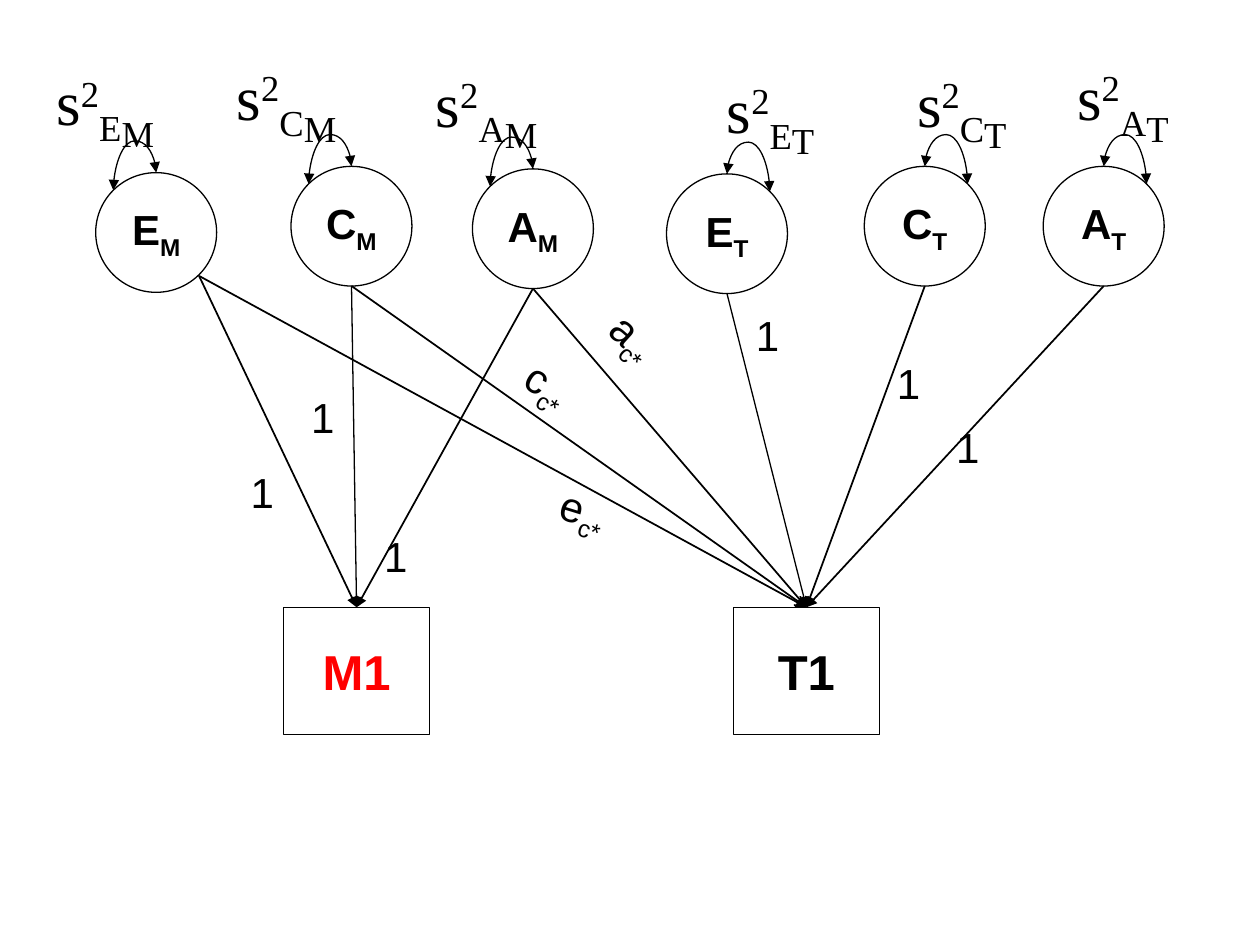
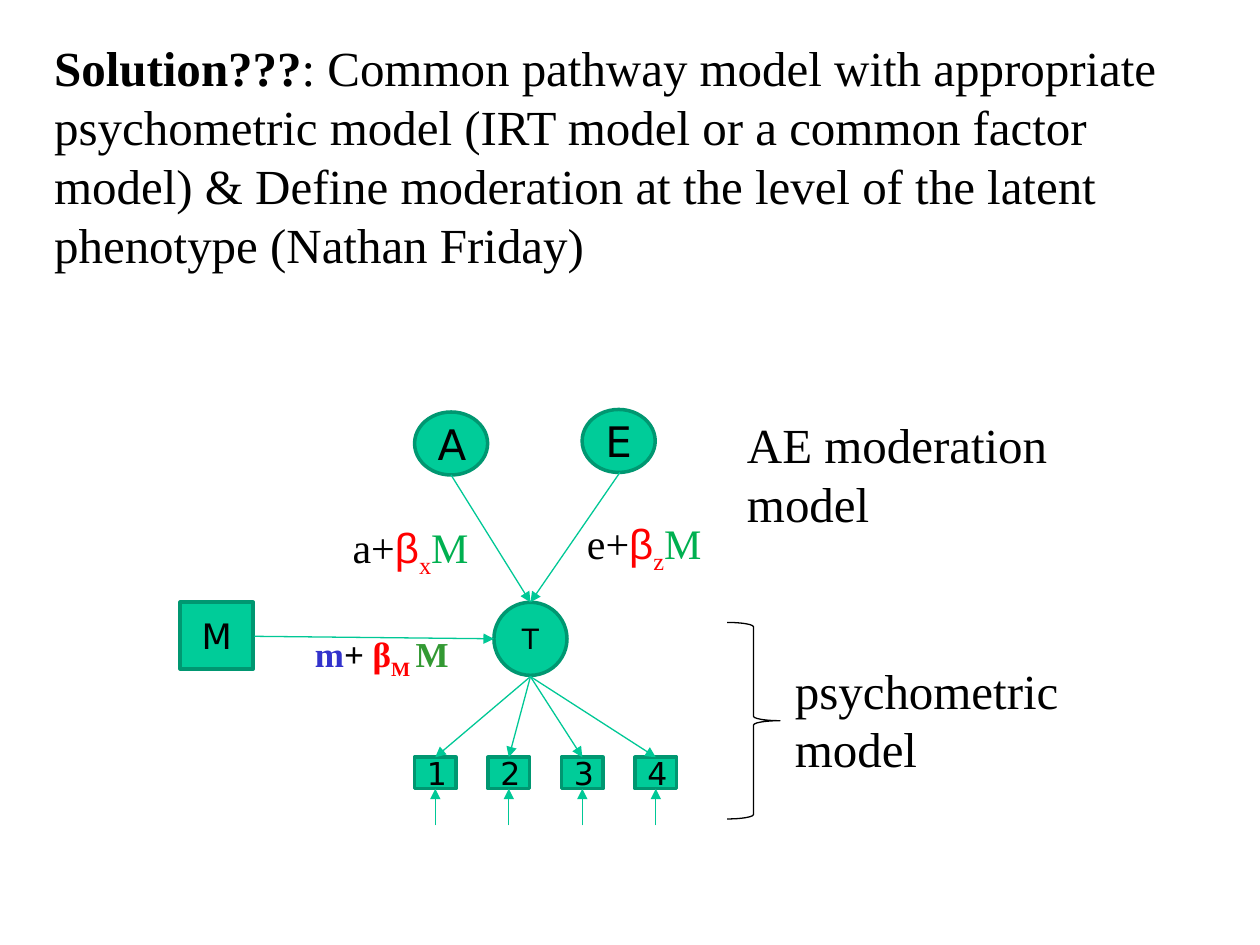
"""Build two slides of path diagrams for twin models with moderation."""
from dataclasses import dataclass
from typing import Optional

from lxml.etree import SubElement
from pptx import Presentation
from pptx.dml.color import RGBColor
from pptx.enum.shapes import MSO_CONNECTOR as Link, MSO_SHAPE as Preset
from pptx.enum.text import MSO_ANCHOR as Anchor, MSO_AUTO_SIZE as AutoSize, PP_ALIGN as Align
from pptx.oxml.ns import qn
from pptx.util import Inches, Pt

BLACK, WHITE, RED = "000000", "FFFFFF", "FF0000"
TEAL, TEAL_EDGE, TEAL_LINE = "00CC99", "009771", "00C896"
LEAF, GREEN, BLUE = "00B050", "339933", "3333CC"
SANS, SERIF, NODE_FONT = "Arial", "Times New Roman", "DejaVu Sans"
SUB, LOW_SUB, SUPER = -25, -34, 30
CIRCLE_W, CIRCLE_H = 0.96, 0.95
RECT_W, RECT_H, RECT_TOP = 1.16, 1.01, 4.82
ITEM_W, ITEM_H, ITEM_TOP = 0.33, 0.25, 6.01


@dataclass
class Span:
    text: str
    color: str = BLACK
    font: Optional[str] = None
    base: int = 0


@dataclass
class Factor:
    letter: str
    group: str
    left: float
    top: float
    side: int
    variance_at: tuple

    @property
    def middle(self):
        return self.left + CIRCLE_W / 2

    @property
    def foot(self):
        return self.middle, self.top + CIRCLE_H


@dataclass
class Label:
    spans: list
    at: tuple
    rotation: float = 0
    wrap: bool = False


@dataclass
class Node:
    text: str
    preset: Preset
    at: tuple
    size: int


@dataclass
class Path:
    start: tuple
    end: tuple
    width: float = 1
    head: str = "triangle"


FACTORS = [
    Factor("E", "M", 0.76, 1.37, -1, (0.35, 0.45, 1.07, 0.71)),
    Factor("C", "M", 2.31, 1.32, -1, (1.78, 0.41, 1.09, 0.71)),
    Factor("A", "M", 3.75, 1.34, -1, (3.36, 0.46, 1.11, 0.71)),
    Factor("E", "T", 5.29, 1.38, 1, (5.67, 0.51, 0.98, 0.71)),
    Factor("C", "T", 6.86, 1.32, 1, (7.18, 0.46, 1, 0.71)),
    Factor("A", "T", 8.28, 1.32, 1, (8.45, 0.41, 0.98, 0.71)),
]

ONES = [
    Label([Span("1")], (7.49, 3.3, 0.39, 0.5)),
    Label([Span("1")], (2.95, 4.16, 0.39, 0.5)),
    Label([Span("1")], (2.37, 3.06, 0.39, 0.5)),
    Label([Span("1")], (1.89, 3.65, 0.79, 0.5), wrap=True),
    Label([Span("1")], (7.02, 2.79, 0.39, 0.5)),
    Label([Span("1")], (5.9, 2.41, 0.48, 0.5)),
]

CROSS_LOADINGS = [
    Label([Span(letter), Span("c*", base=SUB)], at, rotation)
    for letter, at, rotation in [
        ("a", (4.74, 2.46, 0.68, 0.5), 42.4),
        ("c", (4.08, 2.8, 0.57, 0.5), 30.6),
        ("e", (4.35, 3.81, 0.68, 0.5), 17.1),
    ]
]

LATENT_NODES = [
    Node("A", Preset.OVAL, (3.29, 3.27, 0.58, 0.5), 24),
    Node("E", Preset.OVAL, (4.62, 3.25, 0.58, 0.5), 24),
    Node("T", Preset.OVAL, (3.92, 4.78, 0.58, 0.58), 16),
    Node("M", Preset.RECTANGLE, (1.43, 4.78, 0.58, 0.53), 20),
]

TITLE_REST = (
    ": Common pathway model with appropriate psychometric model (IRT model or a common "
    "factor model) & Define moderation at the level of the latent phenotype (Nathan Friday)"
)


def rgb(value: str) -> RGBColor:
    """Turn a hex string into a colour."""
    return RGBColor.from_string(value)


def inches(values) -> list:
    """Turn plain numbers into lengths."""
    return [Inches(value) for value in values]


def write(para, text: str, size=24, font=SANS, color=BLACK, bold=False, base=0):
    """Add one formatted run to a paragraph."""
    run = para.add_run()
    run.text = text
    run.font.size, run.font.name, run.font.bold = Pt(size), font, bold
    run.font.color.rgb = rgb(color)
    if base:
        run.font._element.set("baseline", str(base * 1000))


def write_spans(para, spans: list, font=SANS, **style):
    """Write a sequence of spans that share a style."""
    for span in spans:
        write(para, span.text, color=span.color, font=span.font or font, base=span.base, **style)


def add_label(slide, label: Label, align=Align.LEFT, **style):
    """Add a text box in which each list of spans is a paragraph."""
    box = slide.shapes.add_textbox(*inches(label.at))
    box.rotation = label.rotation
    frame = box.text_frame
    frame.word_wrap = label.wrap
    frame.auto_size = AutoSize.SHAPE_TO_FIT_TEXT
    lines = label.spans if isinstance(label.spans[0], list) else [label.spans]
    for index, spans in enumerate(lines):
        para = frame.add_paragraph() if index else frame.paragraphs[0]
        para.alignment = align
        write_spans(para, spans, **style)


def add_node(slide, preset, at, spans, fill=WHITE, edge=BLACK, edge_width=0.75,
             wrap=False, **style):
    """Add an outlined shape with centred text."""
    shape = slide.shapes.add_shape(preset, *inches(at))
    shape.shadow.inherit = False
    shape.fill.solid()
    shape.fill.fore_color.rgb = rgb(fill)
    shape.line.color.rgb = rgb(edge)
    shape.line.width = Pt(edge_width)
    frame = shape.text_frame
    frame.word_wrap = wrap
    frame.vertical_anchor = Anchor.MIDDLE
    frame.paragraphs[0].alignment = Align.CENTER
    write_spans(frame.paragraphs[0], spans, **style)


def add_link(slide, start, end, color=BLACK, width=0.75, kind=Link.STRAIGHT,
             head=None, tail="triangle"):
    """Add a connector with arrowheads and no shadow."""
    link = slide.shapes.add_connector(kind, *inches((*start, *end)))
    link.line.color.rgb = rgb(color)
    link.line.width = Pt(width)
    outline = link.line._get_or_add_ln()
    for tag, arrow in (("a:headEnd", head), ("a:tailEnd", tail)):
        if arrow:
            SubElement(outline, qn(tag), type=arrow)
    SubElement(link.element.spPr, qn("a:effectLst"))
    return link


def add_variance_loop(slide, factor: Factor):
    """Add the double-headed loop on top of a factor."""
    rise, reach = 0.14, 0.34
    left = factor.middle + factor.side * reach / 2 - rise / 2
    top = factor.top + rise / 2 - reach / 2
    first, last = (top, top + reach) if factor.side > 0 else (top + reach, top)
    loop = add_link(slide, (left + rise, first), (left, last), kind=Link.CURVE, head="triangle")
    loop.rotation = 270
    geometry = loop.element.spPr.find(qn("a:prstGeom"))
    guides = geometry.find(qn("a:avLst"))
    if guides is None:
        guides = SubElement(geometry, qn("a:avLst"))
    SubElement(guides, qn("a:gd"), name="adj1", fmla="val -179500")


def build_loading_slide(deck):
    """Draw the bivariate model with its cross loadings."""
    slide = deck.slides.add_slide(deck.slide_layouts[6])
    for factor in FACTORS:
        at = (factor.left, factor.top, CIRCLE_W, CIRCLE_H)
        spans = [Span(factor.letter), Span(factor.group, base=SUB)]
        add_node(slide, Preset.OVAL, at, spans, size=24, bold=True)
    for name, left, color in (("M1", 2.25, RED), ("T1", 5.82, BLACK)):
        at = (left, RECT_TOP, RECT_W, RECT_H)
        add_node(slide, Preset.RECTANGLE, at, [Span(name, color)], size=28, bold=True)

    m1_top, t1_top = (2.83, RECT_TOP), (6.4, RECT_TOP)
    e_m_edge = (1.58, 2.19)
    c_m, a_m, e_t, c_t, a_t = [factor.foot for factor in FACTORS[1:]]
    paths = [
        Path(e_t, t1_top, 0.75), Path(c_m, m1_top, 0.75), Path(c_m, t1_top, head="arrow"),
        Path(a_m, t1_top), Path(e_m_edge, t1_top), Path(e_m_edge, m1_top),
        Path(a_m, m1_top), Path(c_t, t1_top), Path(a_t, t1_top),
    ]
    for path_item in paths:
        add_link(slide, path_item.start, path_item.end, width=path_item.width,
                 tail=path_item.head)
    for label in ONES + CROSS_LOADINGS:
        add_label(slide, label)
    for factor in FACTORS:
        add_variance_loop(slide, factor)
        spans = [Span("s"), Span("2", base=SUPER), Span(factor.letter, base=SUB),
                 Span(factor.group, base=LOW_SUB)]
        add_label(slide, Label(spans, factor.variance_at), size=36, font=SERIF)


def add_title(slide):
    """Move the title placeholder to the top and fill it."""
    title = slide.shapes.title
    title.left, title.top, title.width, title.height = inches((0.33, 0.25, 9, 1.99))
    frame = title.text_frame
    frame.word_wrap = True
    frame.auto_size = AutoSize.NONE
    frame.vertical_anchor = Anchor.TOP
    para = frame.paragraphs[0]
    para.alignment = Align.LEFT
    write(para, "Solution???", size=28, font=SERIF, bold=True)
    write(para, TITLE_REST, size=28, font=SERIF)


def build_pathway_slide(deck):
    """Draw the common pathway model with moderation."""
    slide = deck.slides.add_slide(deck.slide_layouts[5])
    add_title(slide)
    pitch = 1.75 / 3
    items = [Node(str(index + 1), Preset.RECTANGLE,
                  (3.29 + index * pitch, ITEM_TOP, ITEM_W, ITEM_H), 18) for index in range(4)]
    for node in LATENT_NODES + items:
        add_node(slide, node.preset, node.at, [Span(node.text)], fill=TEAL, edge=TEAL_EDGE,
                 edge_width=2, wrap=True, size=node.size, font=NODE_FONT)

    trait_top, trait_foot = (4.21, 4.78), (4.21, 5.37)
    links = [((3.58, 3.77), trait_top), ((4.92, 3.75), trait_top), ((2.02, 5.05), (3.92, 5.07))]
    for item in items:
        middle = item.at[0] + ITEM_W / 2
        links.append((trait_foot, (middle, ITEM_TOP)))
        links.append(((middle, 6.55), (middle, ITEM_TOP + ITEM_H)))
    for start, end in links:
        add_link(slide, start, end, color=TEAL_LINE)

    for letter, index, at in (("a", "x", (2.7, 4.09, 1.14, 0.5)),
                              ("e", "z", (4.56, 4.06, 1.14, 0.5))):
        spans = [Span(letter + "+"), Span("β", RED, SANS), Span(index, RED, base=SUB),
                 Span("M", LEAF)]
        add_label(slide, Label(spans, at), font=SERIF)
    spans = [Span("m", BLUE), Span("+"), Span(" β", RED), Span("M ", RED, base=SUB),
             Span("M", GREEN)]
    add_label(slide, Label(spans, (2.38, 4.97, 1.3, 0.44)), align=Align.CENTER,
              size=20, font=SERIF, bold=True)

    brace = slide.shapes.add_shape(Preset.RIGHT_BRACE, *inches((5.77, 4.94, 0.42, 1.56)))
    brace.shadow.inherit = False
    brace.fill.background()
    brace.line.color.rgb = rgb(BLACK)
    brace.line.width = Pt(0.75)
    for first_line, at in (("psychometric", (6.21, 5.19, 2.41, 1.04)),
                           ("AE moderation", (5.83, 3.24, 2.61, 1.04))):
        add_label(slide, Label([[Span(first_line)], [Span("model")]], at), size=28, font=SERIF)


def main():
    """Build the deck and save it."""
    deck = Presentation()
    deck.slide_width, deck.slide_height = Inches(10), Inches(7.5)
    build_loading_slide(deck)
    build_pathway_slide(deck)
    deck.save("out.pptx")


if __name__ == "__main__":
    main()
